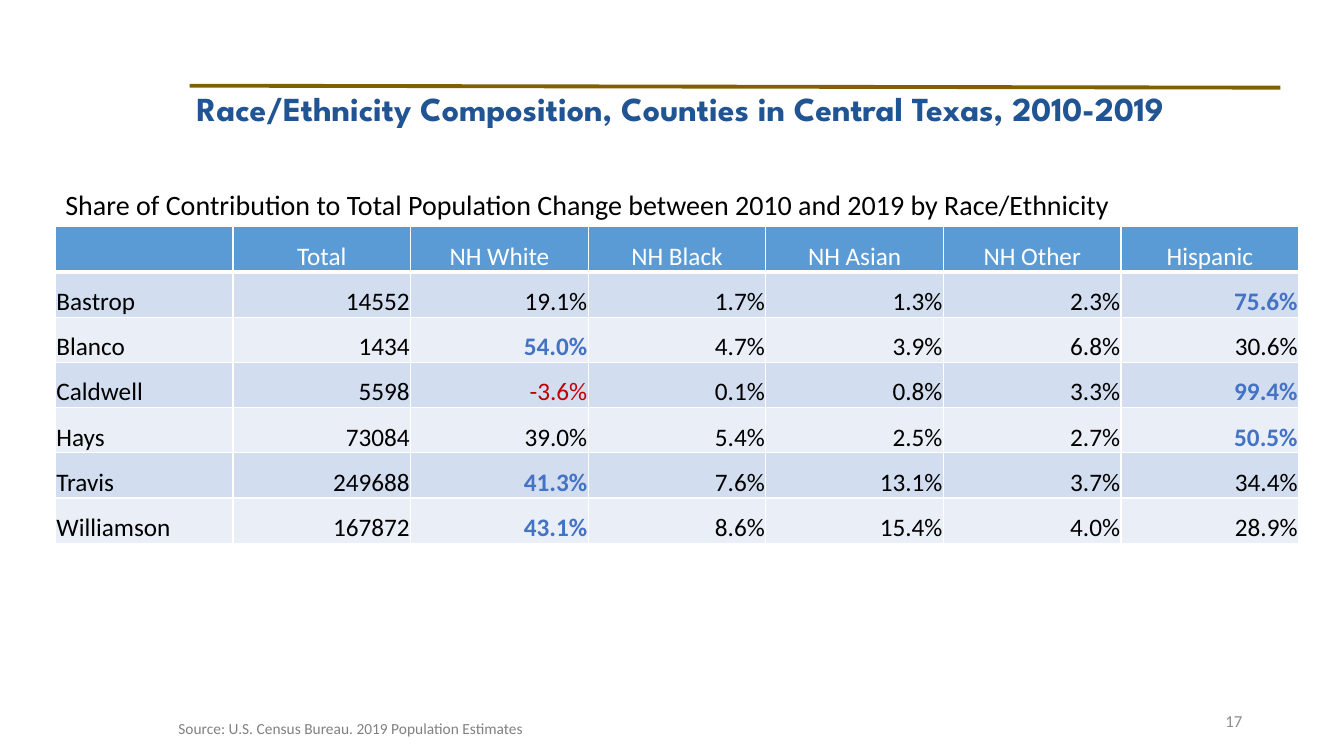
from lxml.etree import SubElement
from pptx import Presentation
from pptx.dml.color import RGBColor as Rgb
from pptx.enum.shapes import MSO_CONNECTOR as Conn
from pptx.enum.text import MSO_ANCHOR as Anchor, PP_ALIGN as Align
from pptx.oxml.ns import qn
from pptx.util import Inches, Pt

# Content
TITLE = "Race/Ethnicity Composition, Counties in Central Texas, 2010-2019"
LEAD = ("Share of Contribution to Total Population Change "
        "between 2010 and 2019 by Race/Ethnicity")
SOURCE = "Source: U.S. Census Bureau. 2019 Population Estimates"
PAGE = "17"
HEADS = ["", "Total", "NH White", "NH Black", "NH Asian", "NH Other", "Hispanic"]
ROWS = [
    ("Bastrop", 14552, 19.1, 1.7, 1.3, 2.3, 75.6),
    ("Blanco", 1434, 54.0, 4.7, 3.9, 6.8, 30.6),
    ("Caldwell", 5598, -3.6, 0.1, 0.8, 3.3, 99.4),
    ("Hays", 73084, 39.0, 5.4, 2.5, 2.7, 50.5),
    ("Travis", 249688, 41.3, 7.6, 13.1, 3.7, 34.4),
    ("Williamson", 167872, 43.1, 8.6, 15.4, 4.0, 28.9),
]

# Look
HUES = {
    "rule": "806000", "title": "205493", "text": "000000", "white": "FFFFFF",
    "head": "5B9BD5", "odd": "D2DEEF", "even": "EAEFF7",
    "top": "4472C4", "loss": "C00000", "page": "8C8C8C", "source": "808080",
}
LEFT, TOP, WIDTH, HIGH = 0.55, 2.25, 12.33, 3.14
CELL = {"vertical_anchor": Anchor.BOTTOM, "margin_left": Inches(0.01),
        "margin_right": Inches(0.01), "margin_top": Inches(0.01),
        "margin_bottom": 0}


def hue(name):
    return Rgb.from_string(HUES[name])


def put(obj, values):
    for key, val in values.items():
        setattr(obj, key, val)


def write(para, text, size, color, bold=False, face="Calibri", align=Align.LEFT):
    para.text = text
    para.alignment = align
    put(para.font, {"size": Pt(size), "bold": bold, "name": face})
    para.font.color.rgb = hue(color)


def label(box, text, size, color, wrap=True, anchor=Anchor.TOP, align=Align.LEFT):
    frame = slide.shapes.add_textbox(*map(Inches, box)).text_frame
    put(frame, {"word_wrap": wrap, "vertical_anchor": anchor})
    write(frame.paragraphs[0], text, size, color, align=align)


def edge(cell, head):
    props = cell._tc.get_or_add_tcPr()
    for side in "LRTB":
        width = 3 if head and side == "B" else 1
        line = SubElement(props, qn(f"a:ln{side}"), w=str(Pt(width)))
        fill = SubElement(line, qn("a:solidFill"))
        SubElement(fill, qn("a:srgbClr"), val=HUES["white"])


def style(r, c):
    """Text, colour, weight and alignment of a cell."""
    if r == 0:
        return HEADS[c], "white", False, Align.CENTER
    row = ROWS[r - 1]
    val = row[c]
    if c < 2:
        return str(val), "text", False, Align.RIGHT if c else Align.LEFT
    best = val == max(row[2:])
    color = "top" if best else "loss" if val < 0 else "text"
    return f"{val:.1f}%", color, best, Align.RIGHT


deck = Presentation()
put(deck, {"slide_width": Inches(13.33), "slide_height": Inches(7.5)})
slide = deck.slides.add_slide(deck.slide_layouts[5])

# Rule above the title
rule = slide.shapes.add_connector(Conn.STRAIGHT, *map(Inches, (1.88, 0.85, 12.7, 0.87)))
rule.line.width = Pt(2.75)
rule.line.color.rgb = hue("rule")
SubElement(rule._element.spPr, qn("a:effectLst"))

# Title
title = slide.shapes.title
put(title, dict(zip(("left", "top", "width", "height"),
                    map(Inches, (1.85, 0.87, 10.82, 6)))))
put(title.text_frame, {"vertical_anchor": Anchor.TOP, "word_wrap": True})
head = title.text_frame.paragraphs[0]
write(head, TITLE, 24, "title", True, "League Spartan")
put(head, {"line_spacing": 0.9, "space_before": Pt(0)})

# Table
rows, cols = len(ROWS) + 1, len(HEADS)
table = slide.shapes.add_table(
    rows, cols, *map(Inches, (LEFT, TOP, WIDTH, HIGH))).table
for r in range(rows):
    for c in range(cols):
        cell = table.cell(r, c)
        put(cell, CELL)
        edge(cell, r == 0)
        cell.fill.solid()
        cell.fill.fore_color.rgb = hue("head" if r == 0 else "odd" if r % 2 else "even")
        text, color, bold, align = style(r, c)
        write(cell.text_frame.paragraphs[0], text, 18, color, bold, align=align)

# Lead line, source and page number
label((LEFT, 1.81, 10.65, 0.44), LEAD, 20, "text", wrap=False)
label((1.67, 7.08, 8.75, 0.29), SOURCE, 11, "source")
label((9.42, 6.95, 3, 0.4), PAGE, 12, "page", anchor=Anchor.MIDDLE, align=Align.RIGHT)

deck.save("out.pptx")
